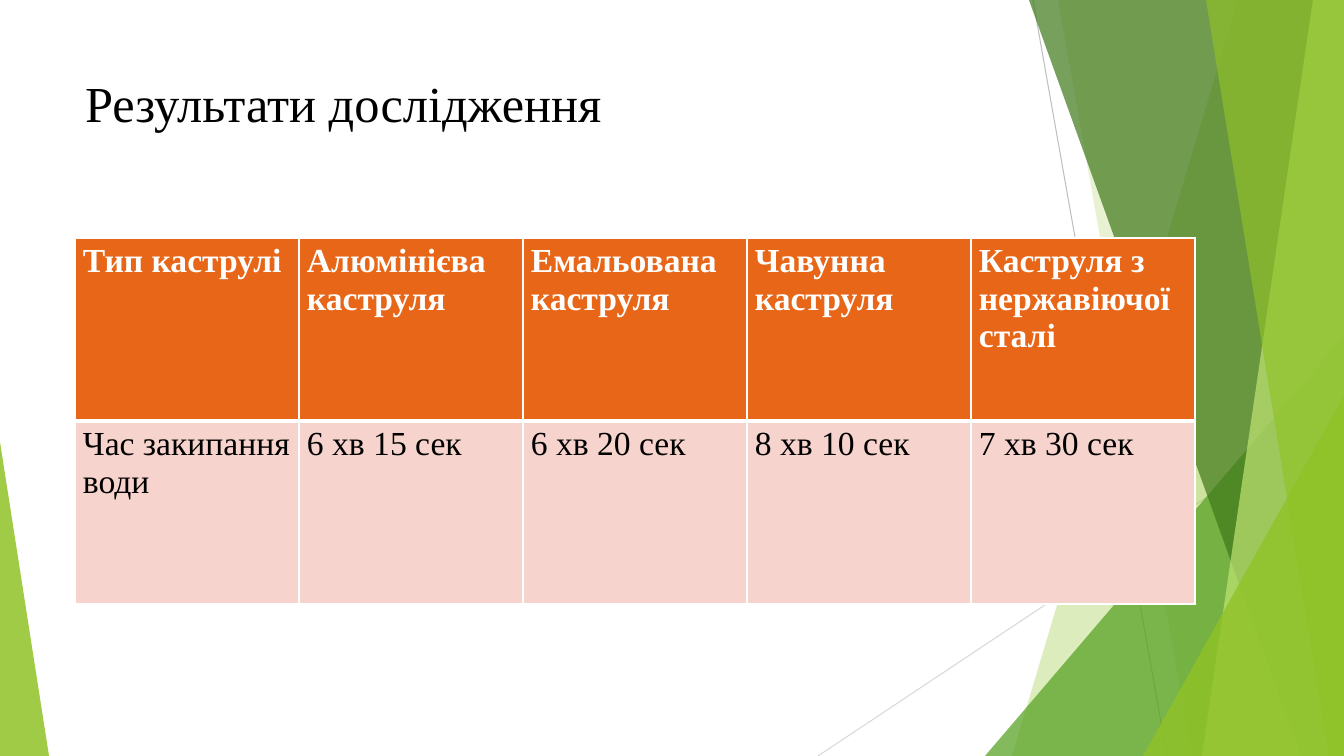
from dataclasses import dataclass

from lxml.etree import SubElement
from pptx import Presentation
from pptx.dml.color import RGBColor
from pptx.enum.shapes import MSO_CONNECTOR, MSO_SHAPE
from pptx.enum.text import MSO_ANCHOR, PP_ALIGN
from pptx.oxml.ns import qn
from pptx.util import Emu, Pt

EMU_PER_PX = 914400 / 100.8
SLIDE_WIDTH, SLIDE_HEIGHT = 1344, 756


def px(length):
    return Emu(round(length * EMU_PER_PX))


@dataclass(frozen=True)
class Theme:
    font: str = "Times New Roman"
    title_size: int = 36
    table_size: int = 24
    text: str = "000000"
    white: str = "FFFFFF"
    header: str = "E76618"
    body: str = "F6D3CC"
    lime: str = "90C226"
    pale_lime: str = "C0E474"
    green: str = "54A021"
    dark_green: str = "3F7819"
    grey: str = "BFBFBF"
    light_grey: str = "D9D9D9"
    hairline: float = 0.75
    border: int = 1
    header_rule: int = 3


class SlideBuilder:
    def __init__(self, slide, theme):
        self.slide = slide
        self.shapes = slide.shapes
        self.theme = theme

    def style_text(self, frame, size, color, bold=False):
        for paragraph in frame.paragraphs:
            paragraph.alignment = PP_ALIGN.LEFT
            for run in paragraph.runs:
                run.font.name = self.theme.font
                run.font.size = Pt(size)
                run.font.bold = bold
                run.font.color.rgb = RGBColor.from_string(color)

    def title(self, text, left, top, width, height):
        title = self.shapes.title
        title.left, title.top = px(left), px(top)
        title.width, title.height = px(width), px(height)
        frame = title.text_frame
        frame.text = text
        frame.word_wrap = True
        frame.vertical_anchor = MSO_ANCHOR.TOP
        self.style_text(frame, self.theme.title_size, self.theme.text)

    def line(self, start, end, color):
        line = self.shapes.add_connector(
            MSO_CONNECTOR.STRAIGHT, *map(px, (*start, *end)))
        line.line.color.rgb = RGBColor.from_string(color)
        line.line.width = Pt(self.theme.hairline)
        SubElement(line._element.spPr, qn("a:effectLst"))

    def paint(self, shape, color, opacity):
        """Give a shape a translucent fill without outline or shadow."""
        shape.shadow.inherit = False
        shape.line.fill.background()
        shape.fill.solid()
        shape.fill.fore_color.rgb = RGBColor.from_string(color)
        srgb = shape._element.spPr.find(".//" + qn("a:srgbClr"))
        SubElement(srgb, qn("a:alpha")).set("val", str(opacity * 1000))

    def shard(self, top_x, bottom_x, color, opacity):
        """Fill from a slanted left edge to the right edge of the slide."""
        outline = self.shapes.build_freeform(top_x, 0, scale=EMU_PER_PX)
        outline.add_line_segments([
            (SLIDE_WIDTH, 0), (SLIDE_WIDTH, SLIDE_HEIGHT),
            (bottom_x, SLIDE_HEIGHT)], close=True)
        self.paint(outline.convert_to_shape(), color, opacity)

    def corner(self, left, top, width, apex, color, opacity):
        """Stand a right triangle on the bottom edge; apex 0 is left, 1 right."""
        corner = self.shapes.add_shape(
            MSO_SHAPE.ISOSCELES_TRIANGLE,
            *map(px, (left, top, width, SLIDE_HEIGHT - top)))
        corner.adjustments[0] = apex
        self.paint(corner, color, opacity)

    def cell_borders(self, cell, top, bottom):
        properties = cell._tc.get_or_add_tcPr()
        border = self.theme.border
        widths = {"L": border, "R": border, "T": top, "B": bottom}
        for side, width in widths.items():
            edge = SubElement(properties, qn("a:ln" + side))
            edge.set("w", str(Pt(width)))
            fill = SubElement(edge, qn("a:solidFill"))
            SubElement(fill, qn("a:srgbClr")).set("val", self.theme.white)

    def table(self, rows, left, top, column_width, row_height):
        theme = self.theme
        columns = len(rows[0])
        table = self.shapes.add_table(
            len(rows), columns, px(left), px(top),
            px(column_width * columns), px(row_height * len(rows))).table
        for column in table.columns:
            column.width = px(column_width)
        for row_index, values in enumerate(rows):
            table.rows[row_index].height = px(row_height)
            is_header = row_index == 0
            for column_index, value in enumerate(values):
                cell = table.cell(row_index, column_index)
                cell.text_frame.text = value
                cell.margin_left = cell.margin_right = px(8)
                cell.margin_top = cell.margin_bottom = px(5)
                self.style_text(cell.text_frame, theme.table_size,
                                theme.white if is_header else theme.text,
                                bold=is_header)
                self.cell_borders(
                    cell,
                    top=theme.header_rule if row_index == 1 else theme.border,
                    bottom=theme.header_rule if is_header else theme.border)
                cell.fill.solid()
                cell.fill.fore_color.rgb = RGBColor.from_string(
                    theme.header if is_header else theme.body)


BOILING_TIMES = [
    ("Тип каструлі", "Алюмінієва каструля", "Емальована каструля",
     "Чавунна каструля", "Каструля з нержавіючої сталі"),
    ("Час закипання води", "6 хв 15 сек", "6 хв 20 сек",
     "8 хв 10 сек", "7 хв 30 сек"),
]


def main():
    presentation = Presentation()
    presentation.slide_width = px(SLIDE_WIDTH)
    presentation.slide_height = px(SLIDE_HEIGHT)
    title_only = presentation.slide_layouts[5]
    theme = Theme()
    builder = SlideBuilder(presentation.slides.add_slide(title_only), theme)

    builder.line((1033, 0), (1167, SLIDE_HEIGHT), theme.grey)
    builder.line((SLIDE_WIDTH, 406), (818, SLIDE_HEIGHT), theme.light_grey)
    builder.shard(1238, 1012, theme.lime, 30)
    builder.shard(1058, 1192, theme.lime, 20)
    builder.corner(985, 336, 359, 1, theme.green, 72)
    builder.shard(1029, 1301, theme.dark_green, 70)
    builder.shard(1313, 1202, theme.pale_lime, 70)
    builder.shard(1206, 1329, theme.lime, 65)
    builder.corner(1143, 396, 201, 1, theme.lime, 80)
    builder.corner(0, 442, 49, 0, theme.lime, 85)

    builder.title("Результати дослідження", 75, 67, 948, 145)
    builder.table(BOILING_TIMES, 75, 238, column_width=224, row_height=183)

    presentation.save("out.pptx")


if __name__ == "__main__":
    main()
